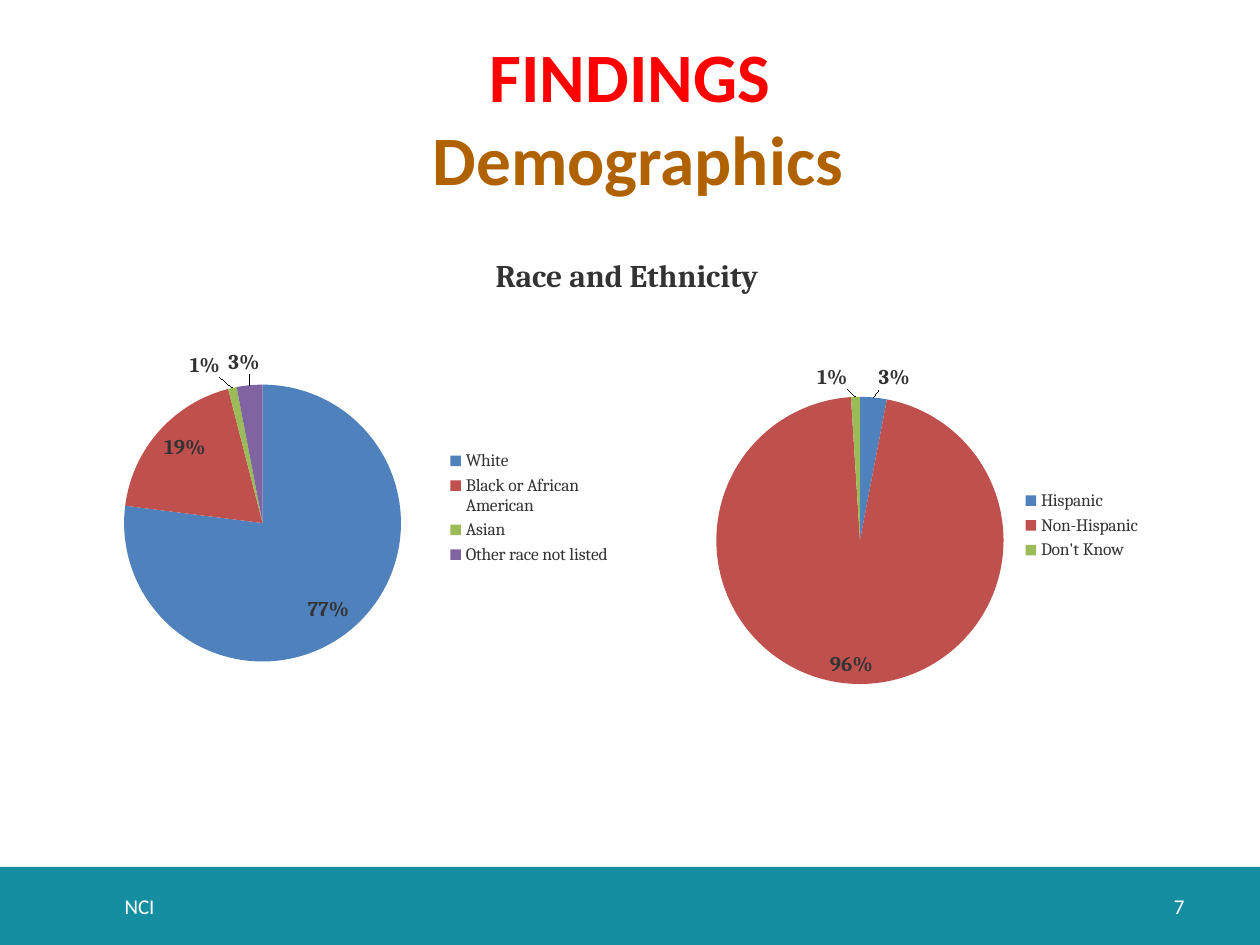
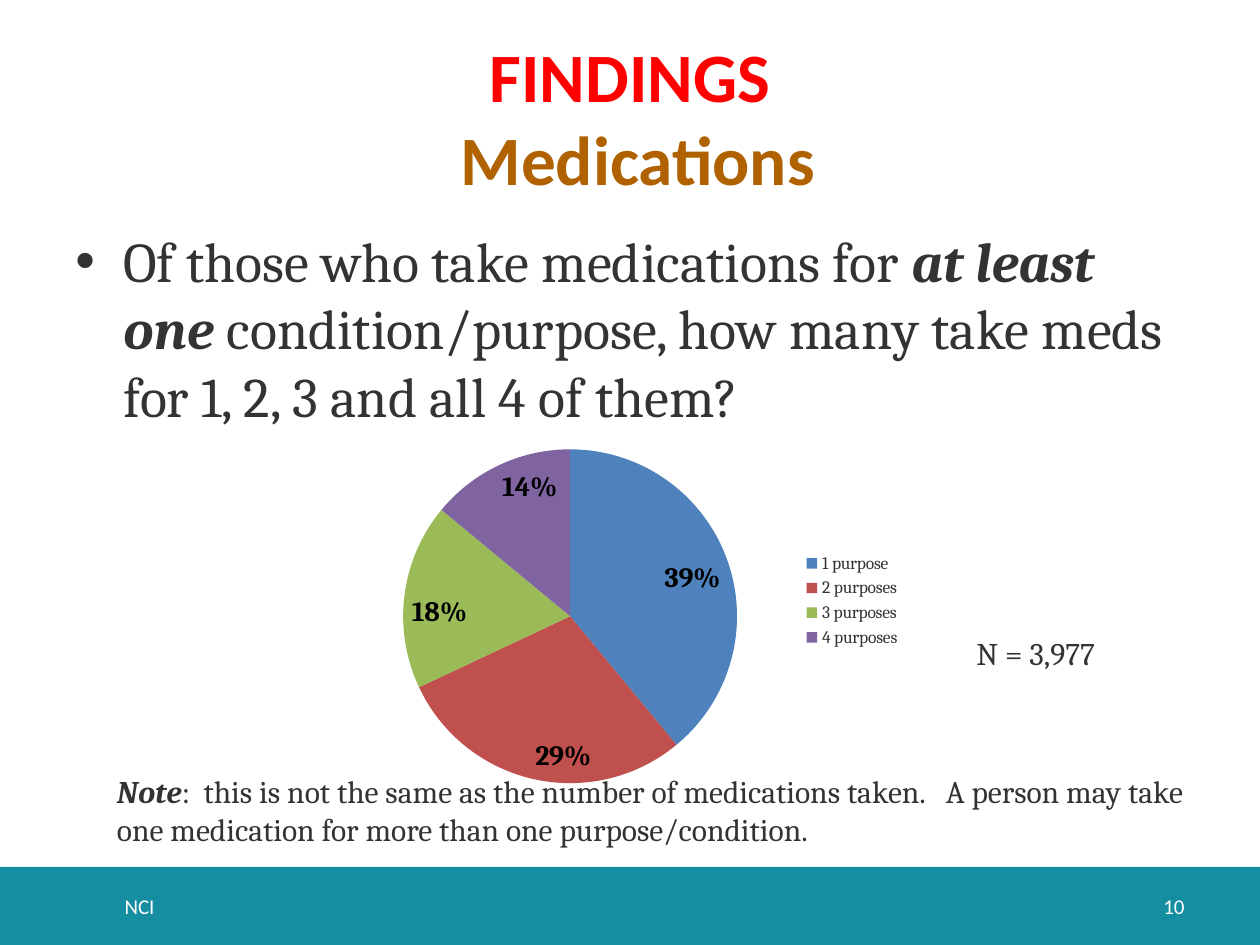
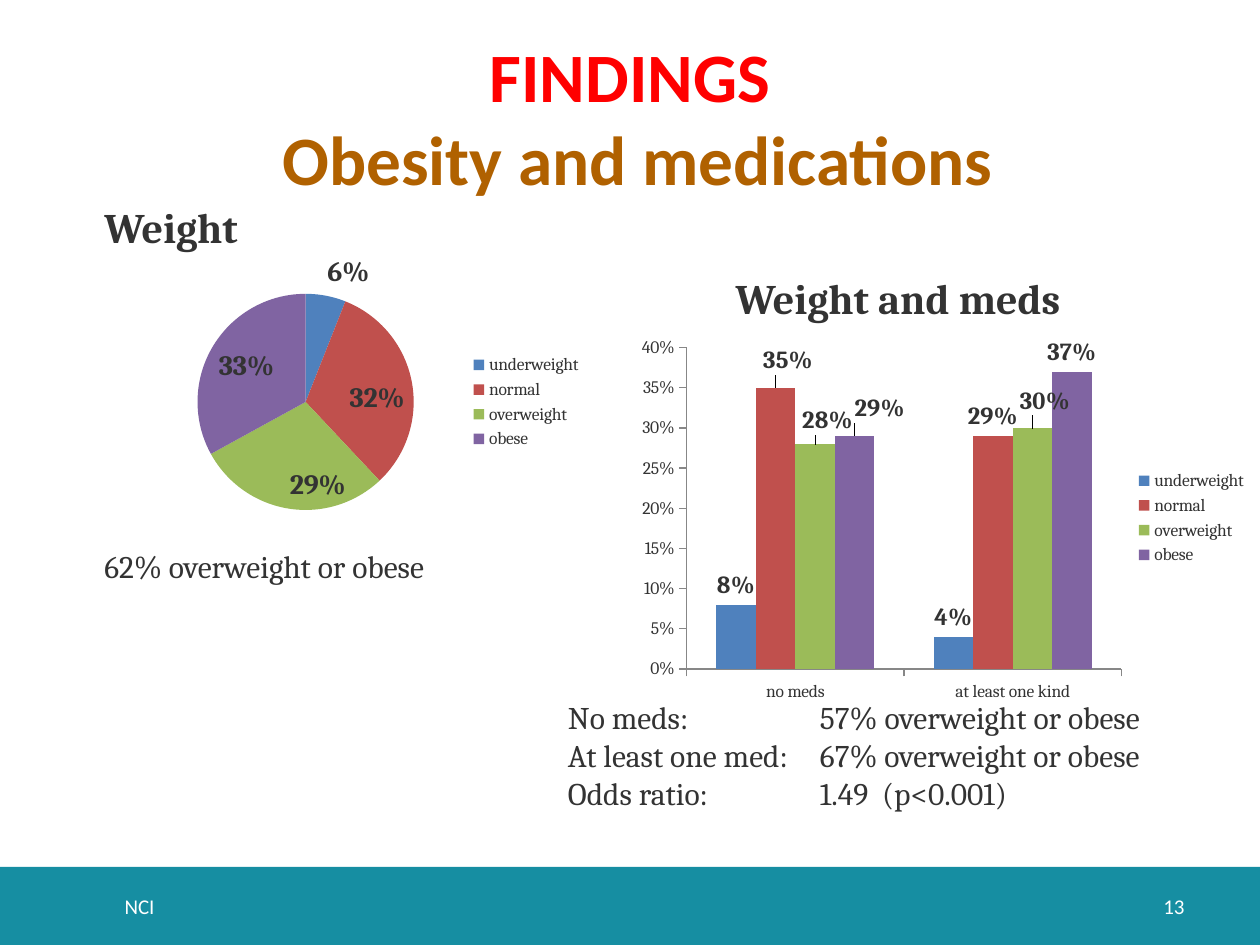
from lxml import etree
from pptx import Presentation
from pptx.chart.data import CategoryChartData
from pptx.dml.color import RGBColor
from pptx.enum.chart import XL_CHART_TYPE, XL_LABEL_POSITION, XL_LEGEND_POSITION, XL_TICK_MARK
from pptx.enum.shapes import MSO_SHAPE
from pptx.enum.text import MSO_ANCHOR, PP_ALIGN
from pptx.oxml.ns import qn
from pptx.util import Inches, Pt

PIE, COLUMN = XL_CHART_TYPE.PIE, XL_CHART_TYPE.COLUMN_CLUSTERED
INSIDE, OUTSIDE = XL_LABEL_POSITION.INSIDE_END, XL_LABEL_POSITION.OUTSIDE_END
LEGEND_RIGHT = XL_LEGEND_POSITION.RIGHT
TICK_OUTSIDE = XL_TICK_MARK.OUTSIDE
RECTANGLE = MSO_SHAPE.RECTANGLE
TOP, MIDDLE = MSO_ANCHOR.TOP, MSO_ANCHOR.MIDDLE
LEFT, CENTER, RIGHT = PP_ALIGN.LEFT, PP_ALIGN.CENTER, PP_ALIGN.RIGHT

TEAL, RED, BROWN = "168EA2", "FF0000", "B06100"
INK, BLACK, WHITE, AXIS_GREY = "333333", "000000", "FFFFFF", "878787"
SERIES_COLORS = ["4F81BD", "C0504D", "9BBB59", "8064A2"]
HEADING_FONT, BODY_FONT = "Calibri", "Cambria"
WEIGHT_GROUPS = ["underweight", "normal", "overweight", "obese"]


def color(value):
    """Turn a hex string into a colour."""
    return RGBColor.from_string(value)


def style_font(font, size, hex_color=INK, name=BODY_FONT, bold=False, italic=False):
    """Set every property of a font."""
    font.name, font.size = name, Pt(size)
    font.bold, font.italic = bold, italic
    font.color.rgb = color(hex_color)


def add_text(slide, box, text, size, hex_color=INK, name=BODY_FONT, bold=False,
             align=LEFT, anchor=TOP):
    """Add a wrapped text box in one style and return its text frame."""
    text_frame = slide.shapes.add_textbox(*map(Inches, box)).text_frame
    text_frame.word_wrap = True
    text_frame.vertical_anchor = anchor
    text_frame.text = text
    for paragraph in text_frame.paragraphs:
        paragraph.alignment = align
        for run in paragraph.runs:
            style_font(run.font, size, hex_color, name, bold)
    return text_frame


def add_mixed_text(slide, box, parts, size):
    """Add one paragraph of (text, emphasised) parts and return it."""
    paragraph = add_text(slide, box, "", size).paragraphs[0]
    for text, emphasised in parts:
        run = paragraph.add_run()
        run.text = text
        style_font(run.font, size, bold=emphasised, italic=emphasised)
    return paragraph


def add_bullet(paragraph, indent):
    """Give a paragraph a hanging bullet."""
    properties = paragraph._p.get_or_add_pPr()
    properties.set("marL", str(Inches(indent)))
    properties.set("indent", str(-Inches(indent)))
    etree.SubElement(properties, qn("a:buFont")).set("typeface", "Arial")
    etree.SubElement(properties, qn("a:buChar")).set("char", "•")


def add_tab_stop(paragraph, position):
    """Give a paragraph a left tab stop."""
    tabs = etree.SubElement(paragraph._p.get_or_add_pPr(), qn("a:tabLst"))
    tab = etree.SubElement(tabs, qn("a:tab"))
    tab.set("pos", str(Inches(position)))
    tab.set("algn", "l")


def make_layout(settings):
    """Build a manual chart layout from its settings."""
    layout = etree.Element(qn("c:layout"))
    manual = etree.SubElement(layout, qn("c:manualLayout"))
    for key, value in settings.items():
        etree.SubElement(manual, qn(f"c:{key}")).set("val", str(value))
    return layout


def place_plot(chart, area):
    """Place the inner plot area by fractions of the chart."""
    plot_area = chart._chartSpace.chart.plotArea
    for layout in plot_area.findall(qn("c:layout")):
        plot_area.remove(layout)
    settings = {"layoutTarget": "inner", "xMode": "edge", "yMode": "edge"}
    plot_area.insert(0, make_layout(settings | dict(zip("xywh", area))))


def move_label(series, index, offset, size):
    """Put one data label outside its point, shifted by fractions of the chart."""
    label = series.points[index].data_label
    style_font(label.font, size, bold=True)
    label.position = OUTSIDE
    if any(offset):
        label._dLbl.find(qn("c:idx")).addnext(make_layout(dict(zip("xy", offset))))


def add_chart(slide, box, kind, categories, series_values, plot_area):
    """Add a chart with a legend at its right and return it."""
    data = CategoryChartData(number_format="0%")
    data.categories = categories
    for name, values in series_values.items():
        data.add_series(name, values)
    chart = slide.shapes.add_chart(kind, *map(Inches, box), data).chart
    style_font(chart.font, 10)
    chart.has_title = False
    chart.has_legend = True
    chart.legend.position = LEGEND_RIGHT
    chart.legend.include_in_layout = False
    place_plot(chart, plot_area)
    return chart


def style_labels(labels, size, position, hex_color=INK):
    """Show bold percentage values as data labels."""
    labels.show_value = True
    labels.number_format = "0%"
    labels.number_format_is_linked = False
    labels.position = position
    style_font(labels.font, size, hex_color, bold=True)


def add_pie(slide, box, categories, values, plot_area, label_size,
            label_color=INK, outside=None):
    """Add a pie chart, with the labels of small slices outside."""
    chart = add_chart(slide, box, PIE, categories, {"Series 1": values}, plot_area)
    plot = chart.plots[0]
    plot.vary_by_categories = True
    series = plot.series[0]
    style_labels(series.data_labels, label_size, INSIDE, label_color)
    for index, hex_color in enumerate(SERIES_COLORS[:len(values)]):
        fill = series.points[index].format.fill
        fill.solid()
        fill.fore_color.rgb = color(hex_color)
    for index, offset in (outside or {}).items():
        move_label(series, index, offset, label_size)


def add_columns(slide, box, categories, series_values, plot_area, label_size, shifts):
    """Add a clustered column chart with a percentage axis."""
    chart = add_chart(slide, box, COLUMN, categories, series_values, plot_area)
    plot = chart.plots[0]
    plot.vary_by_categories = False
    plot.gap_width, plot.overlap = 150, 0
    for series, hex_color in zip(plot.series, SERIES_COLORS):
        series.format.fill.solid()
        series.format.fill.fore_color.rgb = color(hex_color)
        style_labels(series.data_labels, label_size, OUTSIDE)
        for index, offset in shifts.get(series.name, {}).items():
            move_label(series, index, offset, label_size)
    for axis in (chart.category_axis, chart.value_axis):
        axis.has_major_gridlines = False
        axis.major_tick_mark = TICK_OUTSIDE
        axis.format.line.color.rgb = color(AXIS_GREY)
    value_axis = chart.value_axis
    value_axis.minimum_scale, value_axis.maximum_scale = 0, 0.4
    value_axis.major_unit = 0.05
    value_axis.tick_labels.number_format = "0%"
    value_axis.tick_labels.number_format_is_linked = False


def add_footer(slide, box, number):
    """Draw the footer band with its label and page number."""
    left, top, width, height = box
    band = slide.shapes.add_shape(RECTANGLE, *map(Inches, box))
    band.shadow.inherit = False
    band.fill.solid()
    band.fill.fore_color.rgb = color(TEAL)
    band.line.fill.background()
    add_text(slide, (left + width - 1.5, top + 0.11, 1, 0.4), str(number), 12,
             WHITE, HEADING_FONT, align=RIGHT, anchor=MIDDLE)
    add_text(slide, (left + 0.89, top + 0.11, 7.4, 0.4), "NCI", 12,
             WHITE, HEADING_FONT, anchor=MIDDLE)


def add_findings_slide(presentation, topic, number):
    """Add a slide with the shared two-line title and footer."""
    slide = presentation.slides.add_slide(presentation.slide_layouts[6])
    add_footer(slide, (0, 6.88, 10, 0.62), number)
    title = add_text(slide, (0.5, 0.3, 9, 1.25), f"FINDINGS\v {topic}", 39.6,
                     RED, HEADING_FONT, True, CENTER, MIDDLE)
    title.paragraphs[0].runs[-1].font.color.rgb = color(BROWN)
    return slide


def build_demographics(presentation):
    """Build the slide on race and ethnicity."""
    slide = add_findings_slide(presentation, "Demographics", 7)
    add_text(slide, (1.33, 1.98, 7.29, 0.4), "Race and Ethnicity", 18,
             bold=True, align=CENTER)
    add_pie(slide, (0.64, 2.67, 4.31, 2.72),
            ["White", "Black or African American", "Asian", "Other race not listed"],
            [0.77, 0.19, 0.01, 0.03], (0.08, 0.14, 0.51, 0.81), 12,
            outside={2: (-0.02, -0.01), 3: (0.02, -0.01)})
    add_pie(slide, (5.54, 2.67, 3.62, 3), ["Hispanic", "Non-Hispanic", "Don't Know"],
            [0.03, 0.96, 0.01], (0.04, 0.16, 0.63, 0.76), 12,
            outside={0: (0.01, 0), 2: (-0.05, 0)})


def build_medications(presentation):
    """Build the slide on the number of medication purposes."""
    slide = add_findings_slide(presentation, "Medications", 10)
    question = add_mixed_text(slide, (0.5, 1.75, 9, 4.83), [
        ("Of those who take medications for ", False),
        ("at least one ", True),
        ("condition/purpose, how many take meds for 1, 2, 3 and all 4 of them?", False),
    ], 32)
    add_bullet(question, 0.38)
    add_pie(slide, (2.25, 3.18, 5, 3.17),
            ["1 purpose", "2 purposes", "3 purposes", "4 purposes"],
            [0.39, 0.29, 0.18, 0.14], (0.19, 0.12, 0.53, 0.84), 16, BLACK)
    add_text(slide, (7.65, 4.98, 1.68, 0.4), "N = 3,977", 18)
    add_mixed_text(slide, (0.83, 6.08, 8.68, 0.71), [
        ("Note", True),
        (":  this is not the same as the number of medications taken.   "
         "A person may take one medication for more than one purpose/condition.", False),
    ], 18)


def build_obesity(presentation):
    """Build the slide on weight and medications."""
    slide = add_findings_slide(presentation, "Obesity and medications", 13)
    add_text(slide, (0.73, 1.55, 1.59, 0.81), "Weight", 24, bold=True)
    add_pie(slide, (0.73, 1.89, 3.99, 2.6), WEIGHT_GROUPS, [0.06, 0.32, 0.29, 0.33],
            (0.21, 0.17, 0.43, 0.66), 16, outside={0: (0, 0)})
    add_text(slide, (5.74, 2.11, 3.76, 0.5), "Weight and meds", 24, bold=True)
    shares = [(0.08, 0.04), (0.35, 0.29), (0.28, 0.3), (0.29, 0.37)]
    add_columns(slide, (5, 2.61, 5, 3), ["no meds", "at least one kind"],
                dict(zip(WEIGHT_GROUPS, shares)), (0.09, 0.05, 0.69, 0.85), 14,
                {"normal": {0: (0.02, -0.02)},
                 "overweight": {0: (0.02, -0.01), 1: (0.02, -0.02)},
                 "obese": {0: (0.04, -0.02)}})
    add_text(slide, (0.73, 4.29, 3.19, 0.4), "62% overweight or obese", 18)
    summary = add_text(slide, (4.41, 5.49, 5.34, 1.01),
                       "No meds:\t57% overweight or obese\n"
                       "At least one med:\t67% overweight or obese\n"
                       "Odds ratio:\t1.49  (p<0.001)", 18)
    for paragraph in summary.paragraphs:
        add_tab_stop(paragraph, 2)


def main():
    """Build and save the presentation."""
    presentation = Presentation()
    presentation.slide_width, presentation.slide_height = Inches(10), Inches(7.5)
    build_demographics(presentation)
    build_medications(presentation)
    build_obesity(presentation)
    presentation.save("out.pptx")


if __name__ == "__main__":
    main()
